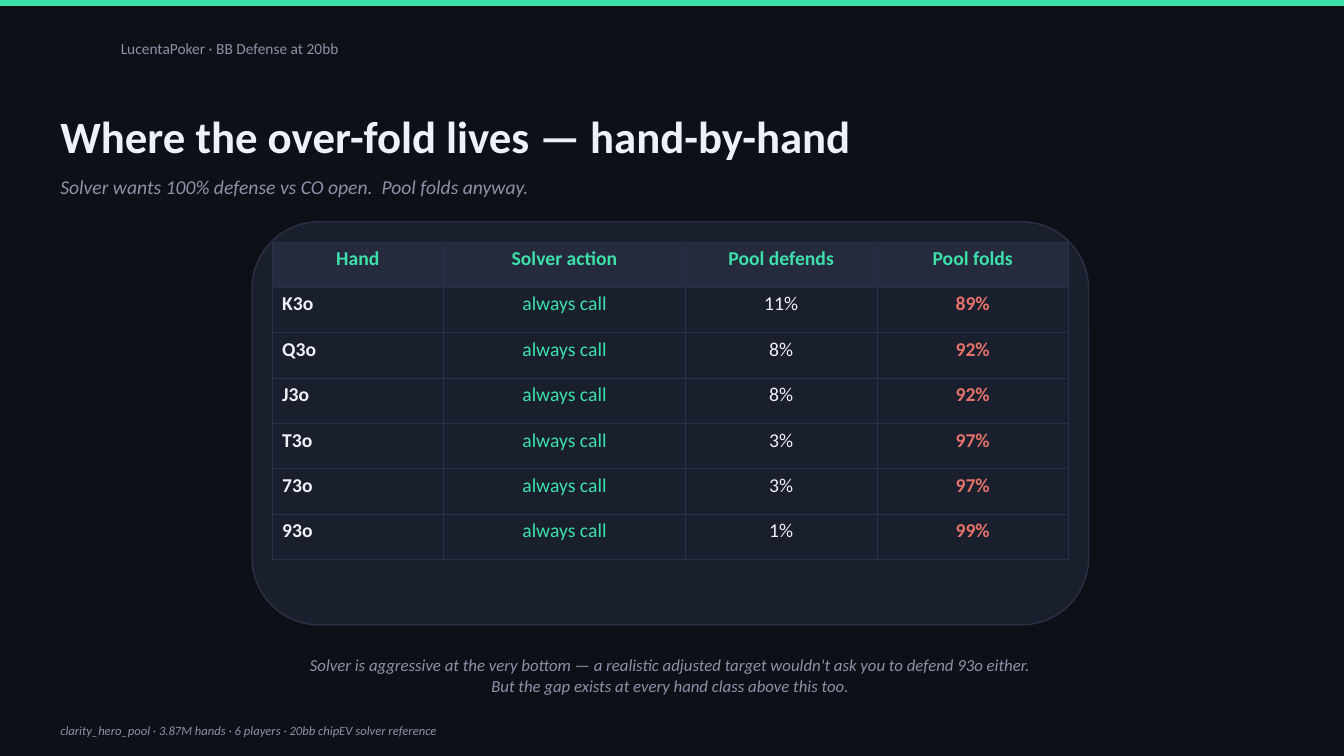
from lxml import etree
from pptx import Presentation
from pptx.dml.color import RGBColor
from pptx.enum.shapes import MSO_SHAPE
from pptx.enum.text import MSO_ANCHOR, PP_ALIGN
from pptx.oxml.ns import qn
from pptx.util import Pt

RECT, ROUND = MSO_SHAPE.RECTANGLE, MSO_SHAPE.ROUNDED_RECTANGLE
LEFT, CENTER = PP_ALIGN.LEFT, PP_ALIGN.CENTER
MIDDLE = MSO_ANCHOR.MIDDLE

# Content
HEADER = "LucentaPoker · BB Defense at 20bb"
FOOTER = "clarity_hero_pool · 3.87M hands · 6 players · 20bb chipEV solver reference"
TITLE = "Where the over-fold lives — hand-by-hand"
SUB = "Solver wants 100% defense vs CO open.  Pool folds anyway."
NOTE = [
    "Solver is aggressive at the very bottom — a realistic adjusted target "
    "wouldn't ask you to defend 93o either.",
    "But the gap exists at every hand class above this too.",
]
HEADS = ["Hand", "Solver action", "Pool defends", "Pool folds"]
HANDS = [("K3o", 11), ("Q3o", 8), ("J3o", 8), ("T3o", 3), ("73o", 3), ("93o", 1)]

# Style
FONT = "Calibri"
HEX = {
    "back": "0E1018", "mint": "3DE0A8", "grey": "8A93A8", "white": "EEF2F7",
    "card": "1A1F2E", "edge": "2B3145", "head": "252B3D", "red": "E5736A",
}
WIDE, HIGH = 960, 540
MARGIN, SPAN = 36, 885.6
COLS = [122.4, 172.8, 136.8, 136.8]
ROW = 32.4
LOOKS = [("white", True, LEFT), ("mint", False, CENTER),
         ("white", False, CENTER), ("red", True, CENTER)]


def rgb(name):
    return RGBColor.from_string(HEX[name])


def add_run(para, text, size, color, bold=False, italic=False, align=LEFT):
    para.alignment = align
    run = para.add_run()
    run.text = text
    font = run.font
    font.name, font.size = FONT, Pt(size)
    font.bold, font.italic = bold, italic
    font.color.rgb = rgb(color)


def add_text(x, y, w, h, lines, size, color, **look):
    frame = slide.shapes.add_textbox(Pt(x), Pt(y), Pt(w), Pt(h)).text_frame
    frame.word_wrap = True
    frame.vertical_anchor = MIDDLE
    for i, line in enumerate(lines):
        para = frame.add_paragraph() if i else frame.paragraphs[0]
        add_run(para, line, size, color, **look)


def add_box(kind, x, y, w, h, fill, line=None):
    box = slide.shapes.add_shape(kind, Pt(x), Pt(y), Pt(w), Pt(h))
    box.shadow.inherit = False
    box.fill.solid()
    box.fill.fore_color.rgb = rgb(fill)
    if line:
        box.line.color.rgb = rgb(line)
        box.line.width = Pt(1)
    else:
        box.line.fill.background()


def add_edges(cell):
    props = cell._tc.get_or_add_tcPr()
    for i, side in enumerate("LRTB"):
        line = etree.Element(qn("a:ln" + side), w=str(Pt(0.5)))
        solid = etree.SubElement(line, qn("a:solidFill"))
        etree.SubElement(solid, qn("a:srgbClr"), val=HEX["edge"])
        props.insert(i, line)


deck = Presentation()
deck.slide_width, deck.slide_height = Pt(WIDE), Pt(HIGH)
slide = deck.slides.add_slide(deck.slide_layouts[6])
slide.background.fill.solid()
slide.background.fill.fore_color.rgb = rgb("back")

# Top bar, header and footer
add_box(RECT, 0, 0, WIDE, 4.32, "mint")
add_text(79.2, 18, 576, 32.4, [HEADER], 11, "grey")
add_text(MARGIN, 507.6, SPAN, 28.8, [FOOTER], 9, "grey", italic=True)

# Title and subtitle
add_text(MARGIN, 72, SPAN, 50.4, [TITLE], 32, "white", bold=True)
add_text(MARGIN, 118.8, SPAN, 28.8, [SUB], 14, "grey", italic=True)

# Card with the hand table
add_box(ROUND, 180, 158.4, 597.6, 288, "card", "edge")
rows = [HEADS] + [(hand, "always call", f"{won}%", f"{100 - won}%")
                  for hand, won in HANDS]
table = slide.shapes.add_table(
    len(rows), len(COLS), Pt(194.4), Pt(172.8),
    Pt(sum(COLS)), Pt(ROW * len(rows))).table
table.horz_banding = False
for col, width in zip(table.columns, COLS):
    col.width = Pt(width)
for r, row in enumerate(rows):
    table.rows[r].height = Pt(ROW)
    for c, text in enumerate(row):
        cell = table.cell(r, c)
        if r:
            cell.fill.background()
            color, bold, align = LOOKS[c]
        else:
            cell.fill.solid()
            cell.fill.fore_color.rgb = rgb("head")
            color, bold, align = "mint", True, CENTER
        add_edges(cell)
        add_run(cell.text_frame.paragraphs[0], text, 14, color, bold, align=align)

# Closing note
add_text(MARGIN, 460.8, SPAN, 43.2, NOTE, 12, "grey", italic=True, align=CENTER)

deck.save("out.pptx")
